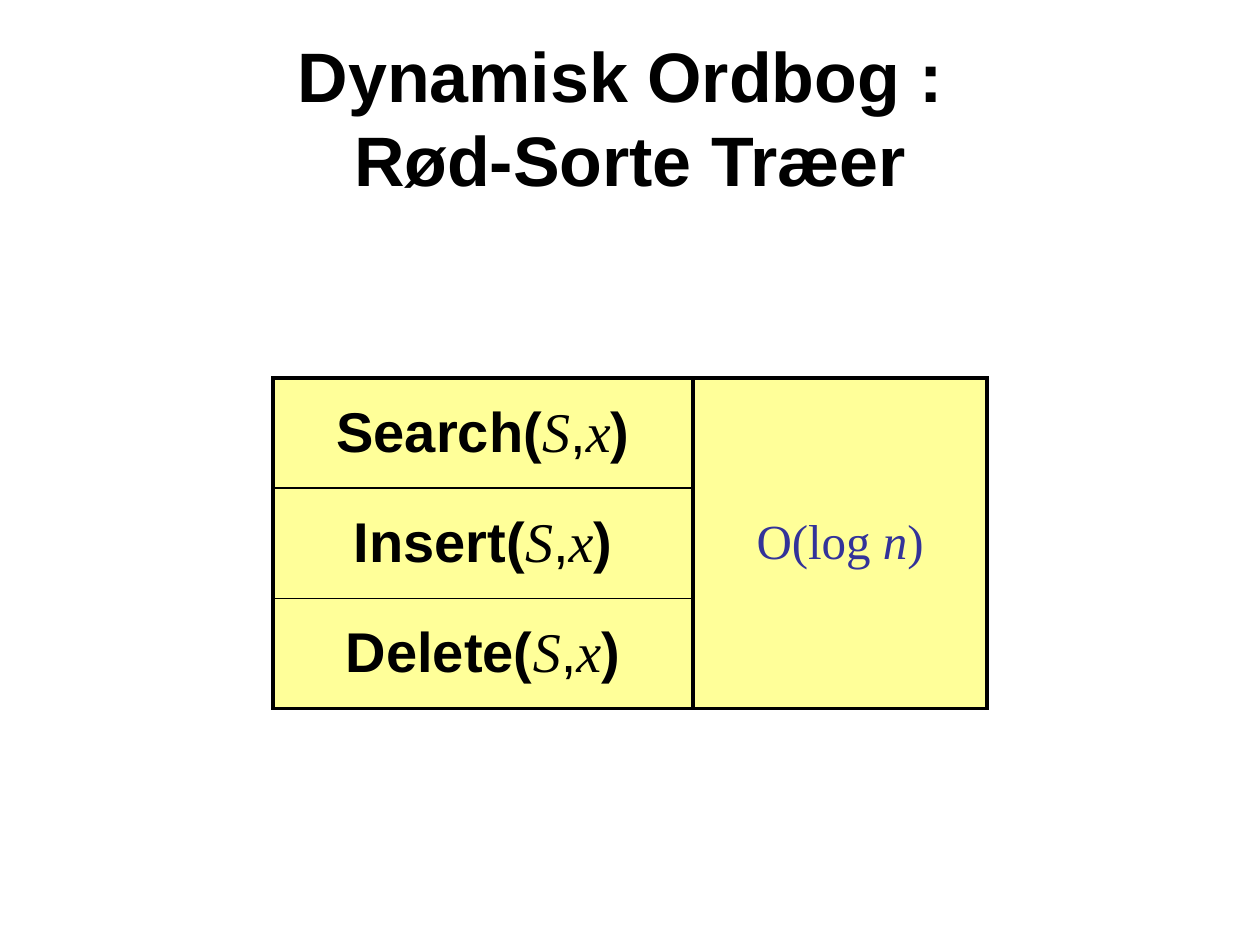
from lxml import etree
from pptx import Presentation
from pptx.dml.color import RGBColor
from pptx.enum.text import MSO_ANCHOR, PP_ALIGN
from pptx.oxml.ns import qn
from pptx.util import Cm, Pt

MIDDLE = MSO_ANCHOR.MIDDLE
CENTER = PP_ALIGN.CENTER
SANS, SERIF = "Arial", "Times New Roman"
BLACK, INDIGO, YELLOW = "000000", "333399", "FFFF99"
THICK, THIN = 2.25, 1


def rgb(color):
    return RGBColor.from_string(color)


def write_cell(cell, parts, size, color, borders):
    """Fill a cell with (text, font, bold, italic) parts and draw its borders."""
    layout = {"vertical_anchor": MIDDLE, "margin_left": Cm(0.25),
              "margin_right": Cm(0.25), "margin_top": 0, "margin_bottom": 0}
    for name, value in layout.items():
        setattr(cell, name, value)
    cell.fill.solid()
    cell.fill.fore_color.rgb = rgb(YELLOW)

    paragraph = cell.text_frame.paragraphs[0]
    paragraph.alignment = CENTER
    before = etree.SubElement(paragraph._p.get_or_add_pPr(), qn("a:spcBef"))
    etree.SubElement(before, qn("a:spcPct"), val="20000")
    for text, face, bold, italic in parts:
        run = paragraph.add_run()
        run.text = text
        style = {"name": face, "size": Pt(size), "bold": bold, "italic": italic}
        for name, value in style.items():
            setattr(run.font, name, value)
        run.font.color.rgb = rgb(color)

    # Border elements come before the fill, in the order L, R, T, B
    properties = cell._tc.get_or_add_tcPr()
    for position, side in enumerate("LRTB"):
        line = etree.Element(qn(f"a:ln{side}"), w=str(int(Pt(borders[side]))))
        solid = etree.SubElement(line, qn("a:solidFill"))
        etree.SubElement(solid, qn("a:srgbClr"), val=BLACK)
        properties.insert(position, line)


prs = Presentation()
prs.slide_width, prs.slide_height = Cm(25.4), Cm(19.05)
slide = prs.slides.add_slide(prs.slide_layouts[5])

# Title
title = slide.shapes.title
title_box = {"left": Cm(1.27), "top": Cm(0.76), "width": Cm(22.86), "height": Cm(3.18)}
for name, value in title_box.items():
    setattr(title, name, value)
title.text_frame.text = "Dynamisk Ordbog : \vRød-Sorte Træer"
title.text_frame.vertical_anchor = MIDDLE
heading = title.text_frame.paragraphs[0]
heading.alignment = CENTER
for run in heading.runs:
    for name, value in {"name": SANS, "size": Pt(40), "bold": True}.items():
        setattr(run.font, name, value)
    run.font.color.rgb = rgb(BLACK)

# Table of operations and their shared running time
operations = ["Search", "Insert", "Delete"]
column_widths = [Cm(8.47), Cm(5.93)]
row_height = Cm(2.22)
costs = slide.shapes.add_table(
    len(operations), 2, Cm(5.5), Cm(7.62),
    sum(column_widths), row_height * len(operations)).table
costs.first_row = costs.horz_banding = False
for column, width in zip(costs.columns, column_widths):
    column.width = width
for row in costs.rows:
    row.height = row_height

# Operations, with thin lines between them
last = len(operations) - 1
for index, operation in enumerate(operations):
    signature = [(operation + "(", SANS, True, False), ("S", SERIF, False, True),
                 (",", SANS, False, False), ("x", SERIF, False, True),
                 (")", SANS, True, False)]
    borders = {"L": THICK, "R": THICK,
               "T": THICK if index == 0 else THIN,
               "B": THICK if index == last else THIN}
    write_cell(costs.cell(index, 0), signature, 32, BLACK, borders)

# Running time, across all rows
costs.cell(0, 1).merge(costs.cell(last, 1))
running_time = [("O(log ", SERIF, False, False), ("n", SERIF, False, True),
                (")", SERIF, False, False)]
for index in range(len(operations)):
    write_cell(costs.cell(index, 1), running_time if index == 0 else [],
               28, INDIGO, dict.fromkeys("LRTB", THICK))

prs.save("out.pptx")
